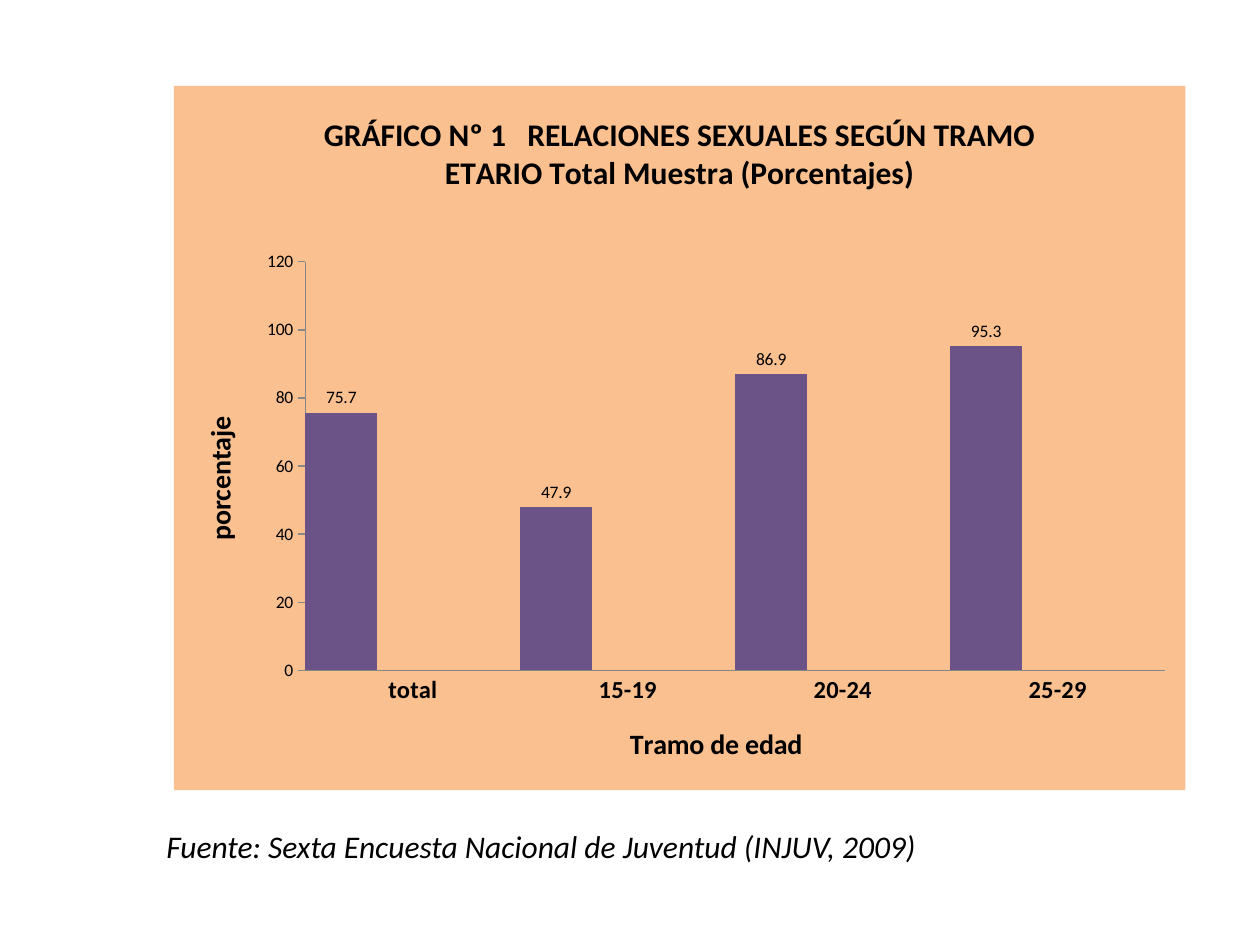
from lxml.etree import SubElement
from pptx import Presentation
from pptx.chart.data import CategoryChartData
from pptx.dml.color import RGBColor
from pptx.enum.chart import XL_CHART_TYPE, XL_LABEL_POSITION, XL_TICK_MARK
from pptx.oxml import parse_xml
from pptx.oxml.ns import nsdecls, qn
from pptx.util import Pt

FONT = "Calibri"
TITLE = "GRÁFICO Nº 1   RELACIONES SEXUALES SEGÚN TRAMO ETARIO Total Muestra (Porcentajes)"
SOURCE = "Fuente: Sexta Encuesta Nacional de Juventud (INJUV, 2009)"
AGES = ["total", "15-19", "20-24", "25-29"]
SERIES = [
    ("Series 1", [75.7, 47.9, 86.9, 95.3], "6B5387"),
    ("Series 2", [None] * 4, "C0504D"),
    ("Series 3", [None] * 4, "9BBB59"),
]
PLOT = {"x": 0.13, "y": 0.25, "w": 0.85, "h": 0.58}
BACK, GREY, BLACK = "FAC090", "878787", "000000"


def style(font, size, bold=False, italic=False):
    """Give a font the common face and colour."""
    font.name, font.size = FONT, Pt(size)
    font.bold, font.italic = bold, italic
    font.color.rgb = RGBColor.from_string(BLACK)


def label(owner, text, size):
    """Set a bold chart or axis title."""
    frame = (owner.chart_title if hasattr(owner, "chart_title") else owner.axis_title).text_frame
    frame.text = text
    style(frame.paragraphs[0].runs[0].font, size, bold=True)


def paint(chart):
    """Fill the chart area and leave it without a border."""
    area = parse_xml(
        f'<c:spPr {nsdecls("c", "a")}><a:solidFill><a:srgbClr val="{BACK}"/>'
        "</a:solidFill><a:ln><a:noFill/></a:ln></c:spPr>"
    )
    chart.element.find(qn("c:chart")).addnext(area)


def place(chart):
    """Fix the inner plot area as fractions of the chart."""
    plot = chart.element.find(qn("c:chart")).find(qn("c:plotArea"))
    for old in plot.findall(qn("c:layout")):
        plot.remove(old)
    layout = parse_xml(f'<c:layout {nsdecls("c")}/>')
    plot.insert(0, layout)
    manual = SubElement(layout, qn("c:manualLayout"))
    parts = {"layoutTarget": "inner", "xMode": "edge", "yMode": "edge", **PLOT}
    for tag, val in parts.items():
        SubElement(manual, qn(f"c:{tag}")).set("val", str(val))


def draw(slide):
    """Add the column chart."""
    data = CategoryChartData()
    data.categories = AGES
    for name, vals, _ in SERIES:
        data.add_series(name, vals)
    chart = slide.shapes.add_chart(
        XL_CHART_TYPE.COLUMN_CLUSTERED, Pt(99.4), Pt(49), Pt(578), Pt(402.5), data
    ).chart
    style(chart.font, 10)
    chart.has_legend = False
    label(chart, TITLE, 18)
    chart.chart_title.include_in_layout = False
    bars = chart.plots[0]
    bars.gap_width, bars.overlap, bars.vary_by_categories = 0, 0, False
    for item, (_, _, color) in zip(bars.series, SERIES):
        item.format.fill.solid()
        item.format.fill.fore_color.rgb = RGBColor.from_string(color)
    tags = bars.series[0].data_labels
    tags.show_value = True
    tags.position = XL_LABEL_POSITION.OUTSIDE_END
    style(tags.font, 10)
    axes = [
        (chart.category_axis, "Tramo de edad", XL_TICK_MARK.NONE, 14, True),
        (chart.value_axis, "porcentaje", XL_TICK_MARK.OUTSIDE, 10, False),
    ]
    for axis, text, tick, size, bold in axes:
        label(axis, text, 16)
        axis.has_major_gridlines = False
        axis.major_tick_mark, axis.minor_tick_mark = tick, XL_TICK_MARK.NONE
        axis.format.line.color.rgb = RGBColor.from_string(GREY)
        style(axis.tick_labels.font, size, bold)
    scale = chart.value_axis
    scale.minimum_scale, scale.maximum_scale, scale.major_unit = 0, 120, 20
    paint(chart)
    place(chart)


def main():
    """Build and save the slide."""
    deck = Presentation()
    deck.slide_width, deck.slide_height = Pt(720), Pt(540)
    slide = deck.slides.add_slide(deck.slide_layouts[6])
    frame = slide.shapes.add_textbox(Pt(88), Pt(469), Pt(521), Pt(29)).text_frame
    frame.word_wrap = True
    frame.text = SOURCE
    style(frame.paragraphs[0].runs[0].font, 18, italic=True)
    draw(slide)
    deck.save("out.pptx")


if __name__ == "__main__":
    main()
